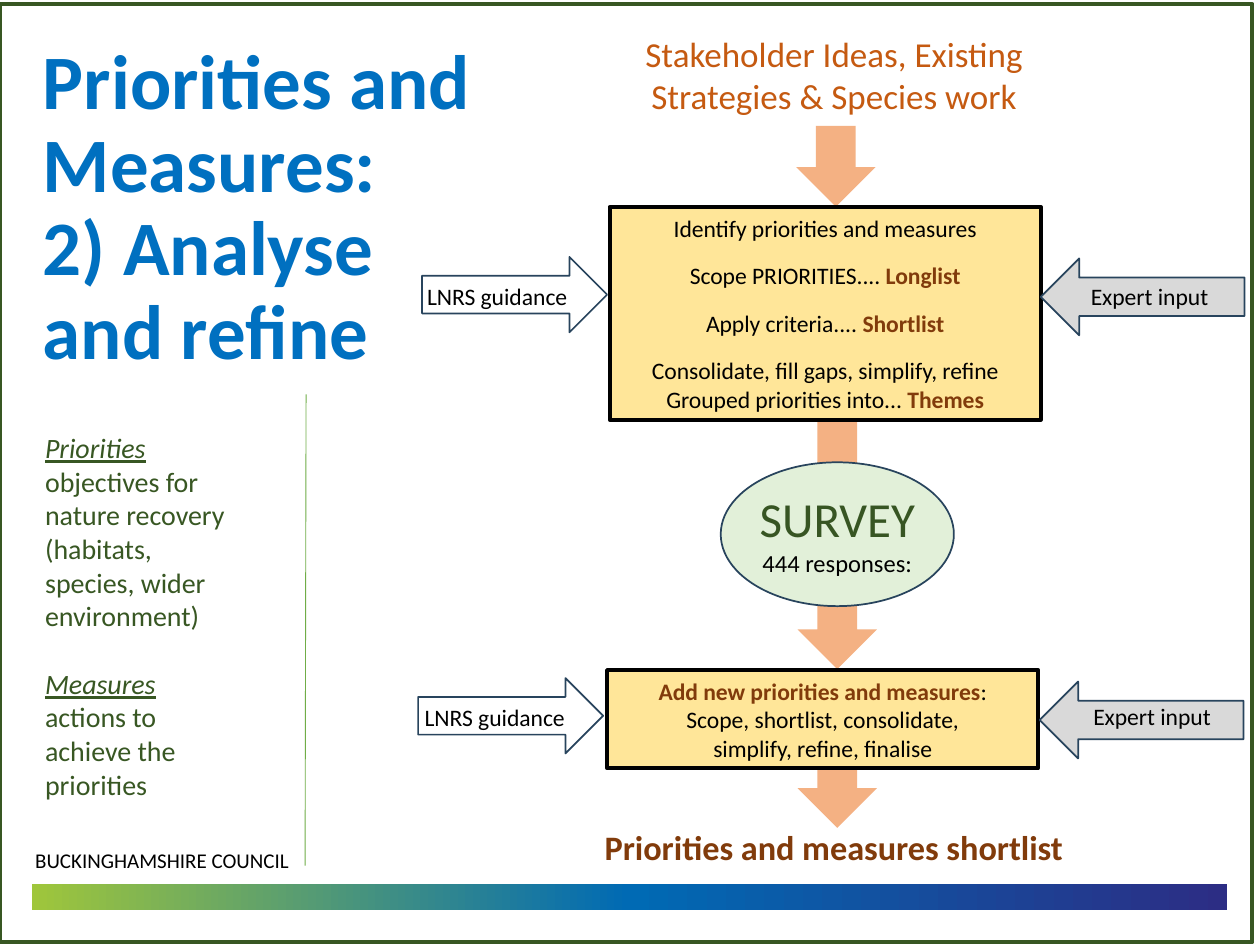
from lxml import etree
from pptx import Presentation
from pptx.dml.color import RGBColor
from pptx.enum.shapes import MSO_CONNECTOR, MSO_SHAPE
from pptx.enum.text import MSO_ANCHOR, MSO_AUTO_SIZE, PP_ALIGN
from pptx.oxml import parse_xml
from pptx.oxml.ns import nsdecls, qn
from pptx.util import Cm, Pt

LEFT, CENTER = PP_ALIGN.LEFT, PP_ALIGN.CENTER
TOP, MIDDLE = MSO_ANCHOR.TOP, MSO_ANCHOR.MIDDLE
RECT, OVAL, PROCESS = MSO_SHAPE.RECTANGLE, MSO_SHAPE.OVAL, MSO_SHAPE.FLOWCHART_PROCESS
DOWN, RIGHT, LEFTWARD = MSO_SHAPE.DOWN_ARROW, MSO_SHAPE.RIGHT_ARROW, MSO_SHAPE.LEFT_ARROW

FONT = "Calibri"
BLACK, BROWN, GREEN = "000000", "813B0B", "385723"
OUTLINE, PEACH, YELLOW, GREY = "28445D", "F4B183", "FFE699", "D9D9D9"
BAR_COLOURS = ("9FC63B", "006AB4", "2C2D84")

# Content: a paragraph is (space before in points, runs); a run is (text, style)
STRONG = {"bold": True, "colour": BROWN}
TERM = {"italic": True, "underline": True}
TITLE = "Priorities and Measures:\v2) Analyse\vand refine"
COUNCIL = [(0, [("BUCKINGHAMSHIRE COUNCIL", {})])]
SOURCES = [(0, [("Stakeholder Ideas, Existing Strategies & Species work", {})])]
RESULT = [(0, [("Priorities and measures shortlist", {"bold": True})])]
DEFINITIONS = [
    (0, [("Priorities", TERM),
         (" objectives for nature recovery (habitats, species, wider environment)", {})]),
    (19.5, [("Measures", TERM), (" actions to achieve the priorities", {})]),
]
SURVEY = [(0, [("SURVEY", {"size": 28, "colour": "375523"})]),
          (0, [("444 responses:", {})])]
ANALYSE = [
    (0, [("Identify priorities and measures", {})]),
    (11, [("Scope PRIORITIES.... ", {}), ("Longlist", STRONG)]),
    (11, [("Apply criteria.... ", {}), ("Shortlist", STRONG)]),
    (11, [("Consolidate, fill gaps, simplify, refine", {})]),
    (0, [("Grouped priorities into... ", {}), ("Themes", STRONG)]),
]
REFINE = [
    (0, [("Add new priorities and measures", STRONG), (":", {})]),
    (0, [("Scope, shortlist, consolidate,", {})]),
    (0, [("simplify, refine, finalise", {})]),
]

# Places in cm: left, top, width, height
FLOW_ARROWS = [(16.08, 7.95, 1.6, 5.54), (16.08, 15.06, 1.6, 1.63), (16.05, 2.54, 1.6, 1.63)]
STEPS = [((12.29, 4.17, 8.69, 4.29), ANALYSE), ((12.24, 13.51, 8.69, 1.98), REFINE)]
# Inputs: text, arrow kind, fill, arrow place, label place
INPUTS = [
    ("LNRS guidance", RIGHT, None, (8.51, 5.18, 3.73, 1.52), (8.36, 5.56, 3.6, 0.84)),
    ("Expert input", LEFTWARD, GREY, (20.98, 5.21, 4.11, 1.55), (21.74, 5.56, 3.18, 0.84)),
    ("LNRS guidance", RIGHT, None, (8.43, 13.67, 3.73, 1.52), (8.31, 14.05, 3.6, 0.84)),
    ("Expert input", LEFTWARD, GREY, (20.96, 13.74, 4.11, 1.55), (21.79, 14.02, 3.18, 0.84)),
]


def rgb(colour):
    return RGBColor.from_string(colour)


def cm(place):
    return [Cm(length) for length in place]


def add_shape(kind, place, fill=None, line=None, weight=1):
    shape = slide.shapes.add_shape(kind, *cm(place))
    shape.shadow.inherit = False
    if fill:
        shape.fill.solid()
        shape.fill.fore_color.rgb = rgb(fill)
    else:
        shape.fill.background()
    if line:
        shape.line.color.rgb = rgb(line)
        shape.line.width = Pt(weight)
    else:
        shape.line.fill.background()
    return shape


def write(shape, content, size, colour=BLACK, align=LEFT, anchor=TOP, spacing=None):
    frame = shape.text_frame
    frame.word_wrap = True
    frame.vertical_anchor = anchor
    for number, (before, runs) in enumerate(content):
        paragraph = frame.add_paragraph() if number else frame.paragraphs[0]
        paragraph.alignment = align
        paragraph.space_before = Pt(before)
        paragraph.line_spacing = spacing
        paragraph.font.name = FONT
        paragraph.font.size = Pt(size)
        paragraph.font.color.rgb = rgb(colour)
        for text, style in runs:
            run = paragraph.add_run()
            run.text = text
            font = run.font
            font.name = FONT
            font.size = Pt(style.get("size", size))
            font.color.rgb = rgb(style.get("colour", colour))
            font.bold = style.get("bold")
            font.italic = style.get("italic")
            font.underline = style.get("underline")


def add_text(place, content, size, **options):
    write(slide.shapes.add_textbox(*cm(place)), content, size, **options)


presentation = Presentation()
presentation.slide_width, presentation.slide_height = Cm(25.4), Cm(19.05)
slide = presentation.slides.add_slide(presentation.slide_layouts[5])

# Footer: gradient bar and council name
bar = add_shape(RECT, (0.64, 17.83, 24.1, 0.51))
stops = "".join(
    f'<a:gs pos="{number * 50000}"><a:srgbClr val="{colour}"/></a:gs>'
    for number, colour in enumerate(BAR_COLOURS))
no_fill = bar.fill._xPr.find(qn("a:noFill"))
no_fill.getparent().replace(no_fill, parse_xml(
    f'<a:gradFill {nsdecls("a")}><a:gsLst>{stops}</a:gsLst><a:lin ang="0" scaled="0"/></a:gradFill>'))
add_text((0.46, 16.97, 12.22, 0.76), COUNCIL, 12)

# Title
title = slide.shapes.title
title.left, title.top, title.width, title.height = cm((0.61, 0.69, 10.9, 7.06))
heading = title.text_frame
heading.text = TITLE
heading.word_wrap = True
heading.auto_size = MSO_AUTO_SIZE.NONE
heading.vertical_anchor = MIDDLE
heading_line = heading.paragraphs[0]
heading_line.alignment = LEFT
heading_line.line_spacing = 0.9
heading_line.font.name = FONT
heading_line.font.size = Pt(44)
heading_line.font.bold = True
heading_line.font.color.rgb = rgb("0070C0")

# Slide border, definitions and divider
add_shape(RECT, (0, 0.08, 25.25, 18.92), line=GREEN, weight=2.25)
add_text((0.66, 8.56, 4.22, 7.77), DEFINITIONS, 16, colour=GREEN)
divider = slide.shapes.add_connector(MSO_CONNECTOR.STRAIGHT, *cm((6.17, 7.95, 6.15, 17.45)))
divider.line.color.rgb = rgb("70AD47")
divider.line.width = Pt(0.5)
etree.SubElement(divider._element.spPr, qn("a:effectLst"))

# Flow from sources to shortlist
for place in FLOW_ARROWS:
    add_shape(DOWN, place, PEACH)
add_text((12.19, 0.53, 9.25, 1.96), SOURCES, 20, colour="C55A11", align=CENTER)
for place, content in STEPS:
    step = add_shape(PROCESS, place, YELLOW, BLACK, 2.25)
    write(step, content, 13.5, align=CENTER, anchor=MIDDLE)
add_shape(OVAL, (14.53, 9.32, 4.7, 2.9), "E2F0D9", OUTLINE)
add_text((14.91, 9.73, 3.94, 2.06), SURVEY, 14, align=CENTER)
add_text((11.94, 16.76, 12.73, 0.89), RESULT, 19.6, colour=BROWN, spacing=0.7)

# Inputs from both sides
for text, kind, fill, arrow_place, label_place in INPUTS:
    add_shape(kind, arrow_place, fill, OUTLINE)
    add_text(label_place, [(0, [(text, {})])], 13.5)

presentation.save("out.pptx")
